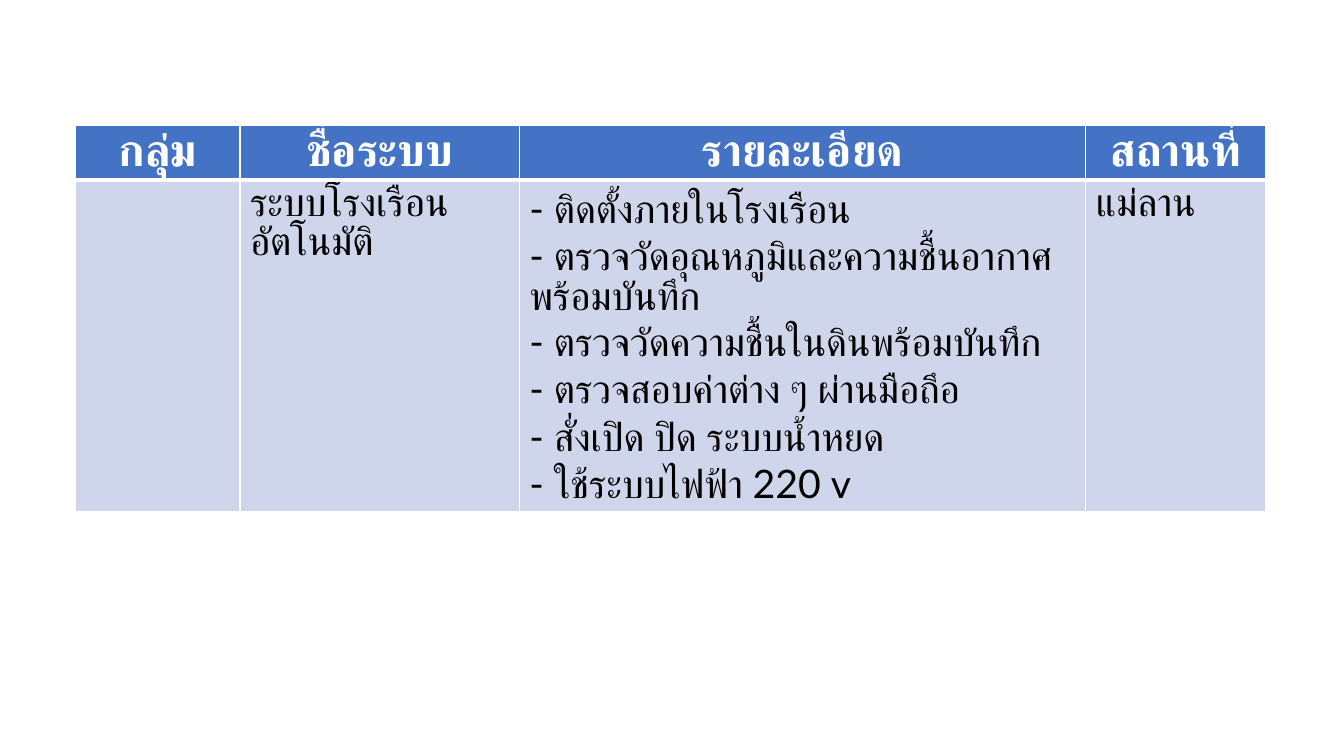
from dataclasses import dataclass

from lxml import etree
from pptx import Presentation
from pptx.dml.color import RGBColor
from pptx.enum.text import PP_ALIGN
from pptx.oxml.ns import qn
from pptx.util import Inches, Pt

CENTER, LEFT = PP_ALIGN.CENTER, PP_ALIGN.LEFT
BLANK_LAYOUT = 6

HEADINGS = ["กลุ่ม", "ชื่อระบบ", "รายละเอียด", "สถานที่"]
DETAILS = [
    "- ติดตั้งภายในโรงเรือน",
    "- ตรวจวัดอุณหภูมิและความชื้นอากาศพร้อมบันทึก",
    "- ตรวจวัดความชื้นในดินพร้อมบันทึก",
    "- ตรวจสอบค่าต่าง ๆ ผ่านมือถึอ",
    "- สั่งเปิด ปิด ระบบน้ำหยด",
    "- ใช้ระบบไฟฟ้า 220 v",
]
SYSTEM = [[], ["ระบบโรงเรือนอัตโนมัติ"], DETAILS, ["แม่ลาน"]]
COLUMN_WIDTHS = [1.63, 2.77, 5.62, 1.78]
ROW_HEIGHT = 0.41


@dataclass(frozen=True)
class Theme:
    font: str = "Lato"
    header_size: int = 32
    body_size: int = 28
    header_fill: str = "4472C4"
    body_fill: str = "CFD5EA"
    header_text: str = "FFFFFF"
    body_text: str = "000000"
    border: str = "FFFFFF"
    border_width: int = 1
    header_rule_width: int = 3


class SlideBuilder:
    def __init__(self, slide, theme):
        self.slide = slide
        self.theme = theme

    def add_table(self, left, top, widths, row_height, rows):
        """Draw a table whose first row is the header; a cell is a list of lines."""
        frame = self.slide.shapes.add_table(
            len(rows), len(widths), Inches(left), Inches(top),
            Inches(sum(widths)), Inches(row_height * len(rows)))
        table = frame.table
        table.horz_banding = False
        for column, width in zip(table.columns, widths):
            column.width = Inches(width)
        for row_index, row in enumerate(rows):
            for column_index, lines in enumerate(row):
                cell = table.cell(row_index, column_index)
                self.format_cell(cell, lines, row_index)

    def format_cell(self, cell, lines, row_index):
        theme = self.theme
        is_header = row_index == 0
        size = theme.header_size if is_header else theme.body_size
        self.set_borders(cell, row_index)
        cell.fill.solid()
        cell.fill.fore_color.rgb = RGBColor.from_string(
            theme.header_fill if is_header else theme.body_fill)
        text_frame = cell.text_frame
        text_frame.paragraphs[0].font.size = Pt(size)
        for index, line in enumerate(lines):
            paragraph = text_frame.add_paragraph() if index else text_frame.paragraphs[0]
            paragraph.alignment = CENTER if is_header else LEFT
            run = paragraph.add_run()
            run.text = line
            run.font.name = theme.font
            run.font.size = Pt(size)
            run.font.bold = is_header
            run.font.color.rgb = RGBColor.from_string(
                theme.header_text if is_header else theme.body_text)

    def set_borders(self, cell, row_index):
        theme = self.theme
        thin, thick = theme.border_width, theme.header_rule_width
        widths = {"a:lnL": thin, "a:lnR": thin,
                  "a:lnT": thick if row_index == 1 else thin,
                  "a:lnB": thick if row_index == 0 else thin}
        properties = cell._tc.get_or_add_tcPr()
        for tag, width in widths.items():
            line = etree.SubElement(properties, qn(tag), w=str(Pt(width)))
            fill = etree.SubElement(line, qn("a:solidFill"))
            etree.SubElement(fill, qn("a:srgbClr"), val=theme.border)


def main():
    presentation = Presentation()
    presentation.slide_width = Inches(13.33)
    presentation.slide_height = Inches(7.5)
    slide = presentation.slides.add_slide(presentation.slide_layouts[BLANK_LAYOUT])
    builder = SlideBuilder(slide, Theme())
    header = [[heading] for heading in HEADINGS]
    builder.add_table(0.75, 1.24, COLUMN_WIDTHS, ROW_HEIGHT, [header, SYSTEM])
    presentation.save("out.pptx")


if __name__ == "__main__":
    main()
